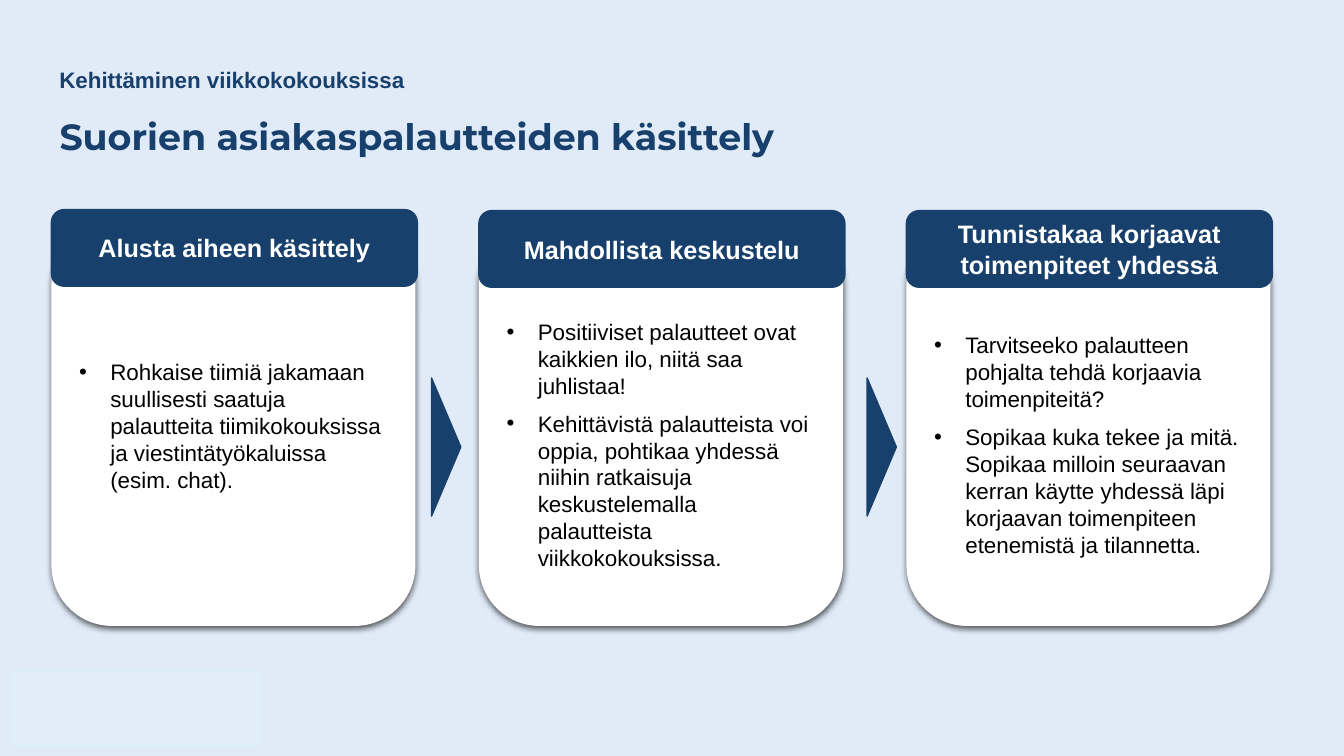
from lxml.etree import SubElement
from pptx import Presentation
from pptx.dml.color import RGBColor
from pptx.enum.shapes import MSO_SHAPE as Shape
from pptx.enum.text import MSO_ANCHOR as Anchor, PP_ALIGN as Align
from pptx.oxml.ns import qn
from pptx.util import Inches, Pt

NAVY = RGBColor(0x17, 0x40, 0x6D)
WHITE = RGBColor(0xFF, 0xFF, 0xFF)
BLACK = RGBColor(0x00, 0x00, 0x00)
BACKGROUND = RGBColor(0xE1, 0xEB, 0xF8)
PANEL_FILL = RGBColor(0xE1, 0xED, 0xF9)
PANEL_LINE = RGBColor(0xDB, 0xEF, 0xF9)

TITLE = "Suorien asiakaspalautteiden käsittely"
SUBTITLE = "Kehittäminen viikkokokouksissa"
STEPS = [
    ("Alusta aiheen käsittely", 2.08, 0.05, [
        "Rohkaise tiimiä jakamaan suullisesti saatuja palautteita "
        "tiimikokouksissa ja viestintätyökaluissa (esim. chat).",
    ]),
    ("Mahdollista keskustelu", 2.09, 0.43, [
        "Positiiviset palautteet ovat kaikkien ilo, niitä saa juhlistaa!",
        "Kehittävistä palautteista voi oppia, pohtikaa yhdessä niihin ratkaisuja "
        "keskustelemalla palautteista viikkokokouksissa.",
    ]),
    ("Tunnistakaa korjaavat toimenpiteet yhdessä", 2.09, 0.43, [
        "Tarvitseeko palautteen pohjalta tehdä korjaavia toimenpiteitä?",
        "Sopikaa kuka tekee ja mitä. Sopikaa milloin seuraavan kerran käytte "
        "yhdessä läpi korjaavan toimenpiteen etenemistä ja tilannetta.",
    ]),
]
FIRST_LEFT, STEP_PITCH = 0.51, 4.24
ARROW_LEFTS = (3.74, 8.06)

TITLE_FONT = {"name": "Montserrat", "size": Pt(26), "bold": True}
SUBTITLE_FONT = {"name": "Arial", "size": Pt(16), "bold": True}
HEADER_FONT = {"name": "Arial", "size": Pt(18), "bold": True}
BODY_FONT = {"name": "Arial", "size": Pt(16), "bold": False}


def write(paragraph, text, font_values, color, **paragraph_values):
    run = paragraph.add_run()
    run.text = text
    for name, value in font_values.items():
        setattr(run.font, name, value)
    run.font.color.rgb = color
    for name, value in paragraph_values.items():
        setattr(paragraph, name, value)


def set_frame(shape):
    frame = shape.text_frame
    frame.word_wrap = True
    frame.vertical_anchor = Anchor.MIDDLE
    return frame


def add_block(slide, kind, box, fill, line=None):
    shape = slide.shapes.add_shape(kind, *map(Inches, box))
    shape.shadow.inherit = False
    shape.fill.solid()
    shape.fill.fore_color.rgb = fill
    if line is None:
        shape.line.fill.background()
    else:
        shape.line.color.rgb = line
        shape.line.width = Pt(1)
    return shape


def add_shadow(shape):
    effects = shape._element.spPr.find(qn("a:effectLst"))
    shadow = SubElement(effects, qn("a:outerShdw"), blurRad=str(Pt(4.5)),
                        dist=str(Pt(1.5)), dir="5400000", algn="t", rotWithShape="0")
    color = SubElement(shadow, qn("a:srgbClr"), val=str(BLACK))
    SubElement(color, qn("a:alpha"), val="63000")


def add_bullet(paragraph):
    properties = paragraph._p.get_or_add_pPr()
    properties.set("marL", str(Inches(0.31)))
    properties.set("indent", str(-Inches(0.31)))
    SubElement(properties, qn("a:buFont"), typeface="Arial")
    SubElement(properties, qn("a:buChar"), char="•")


def add_card(slide, left, top_inset, items):
    card = add_block(slide, Shape.ROUNDED_RECTANGLE, (left, 2.23, 3.61, 3.98), WHITE)
    add_shadow(card)
    frame = set_frame(card)
    frame.margin_top = Inches(top_inset)
    for index, item in enumerate(items):
        paragraph = frame.add_paragraph() if index else frame.paragraphs[0]
        add_bullet(paragraph)
        write(paragraph, item, BODY_FONT, BLACK, alignment=Align.LEFT,
              space_before=Pt(8 if index else 0))


def main():
    presentation = Presentation()
    presentation.slide_width = Inches(13.33)
    presentation.slide_height = Inches(7.5)
    slide = presentation.slides.add_slide(presentation.slide_layouts[5])
    slide.background.fill.solid()
    slide.background.fill.fore_color.rgb = BACKGROUND

    title = slide.shapes.title
    title.left, title.top, title.width, title.height = map(Inches, (0.49, 0.9, 12.35, 0.95))
    subtitle = slide.shapes.add_textbox(*map(Inches, (0.49, 0.4, 12.35, 0.81)))
    for shape, text, font_values in ((title, TITLE, TITLE_FONT),
                                     (subtitle, SUBTITLE, SUBTITLE_FONT)):
        write(set_frame(shape).paragraphs[0], text, font_values, NAVY,
              alignment=Align.LEFT, line_spacing=0.9)

    lefts = [FIRST_LEFT + index * STEP_PITCH for index in range(len(STEPS))]
    for left, (_, _, top_inset, items) in zip(lefts, STEPS):
        add_card(slide, left, top_inset, items)
    for left, (heading, top, _, _) in zip(lefts, STEPS):
        header = add_block(slide, Shape.ROUNDED_RECTANGLE, (left, top, 3.63, 0.76), NAVY, NAVY)
        write(set_frame(header).paragraphs[0], heading, HEADER_FONT, WHITE,
              alignment=Align.CENTER)

    for left in ARROW_LEFTS:
        arrow = add_block(slide, Shape.ISOSCELES_TRIANGLE, (left, 4.29, 1.37, 0.29), NAVY, NAVY)
        arrow.rotation = 90
    add_block(slide, Shape.RECTANGLE, (0.12, 6.65, 2.46, 0.76), PANEL_FILL, PANEL_LINE)

    presentation.save("out.pptx")


if __name__ == "__main__":
    main()
